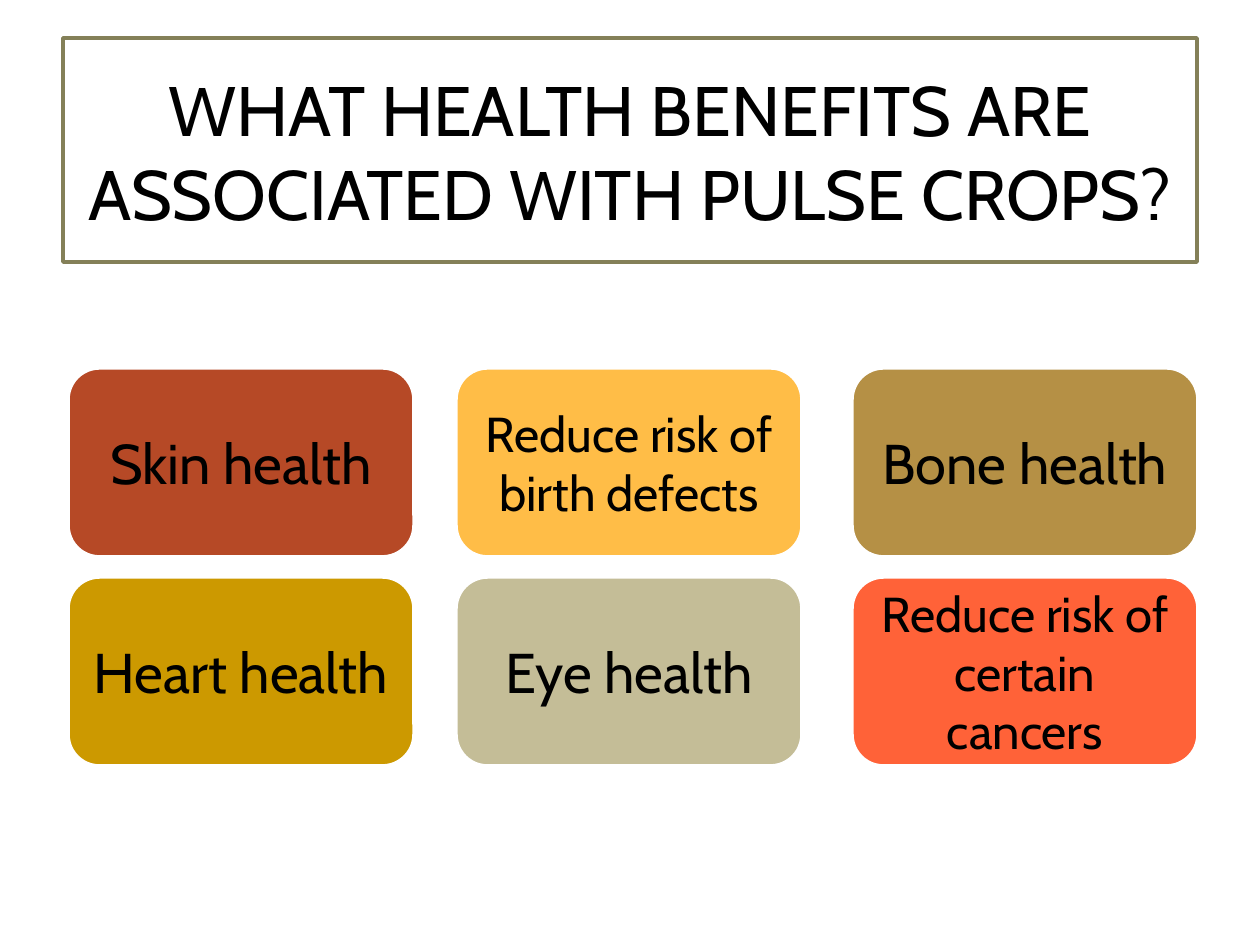
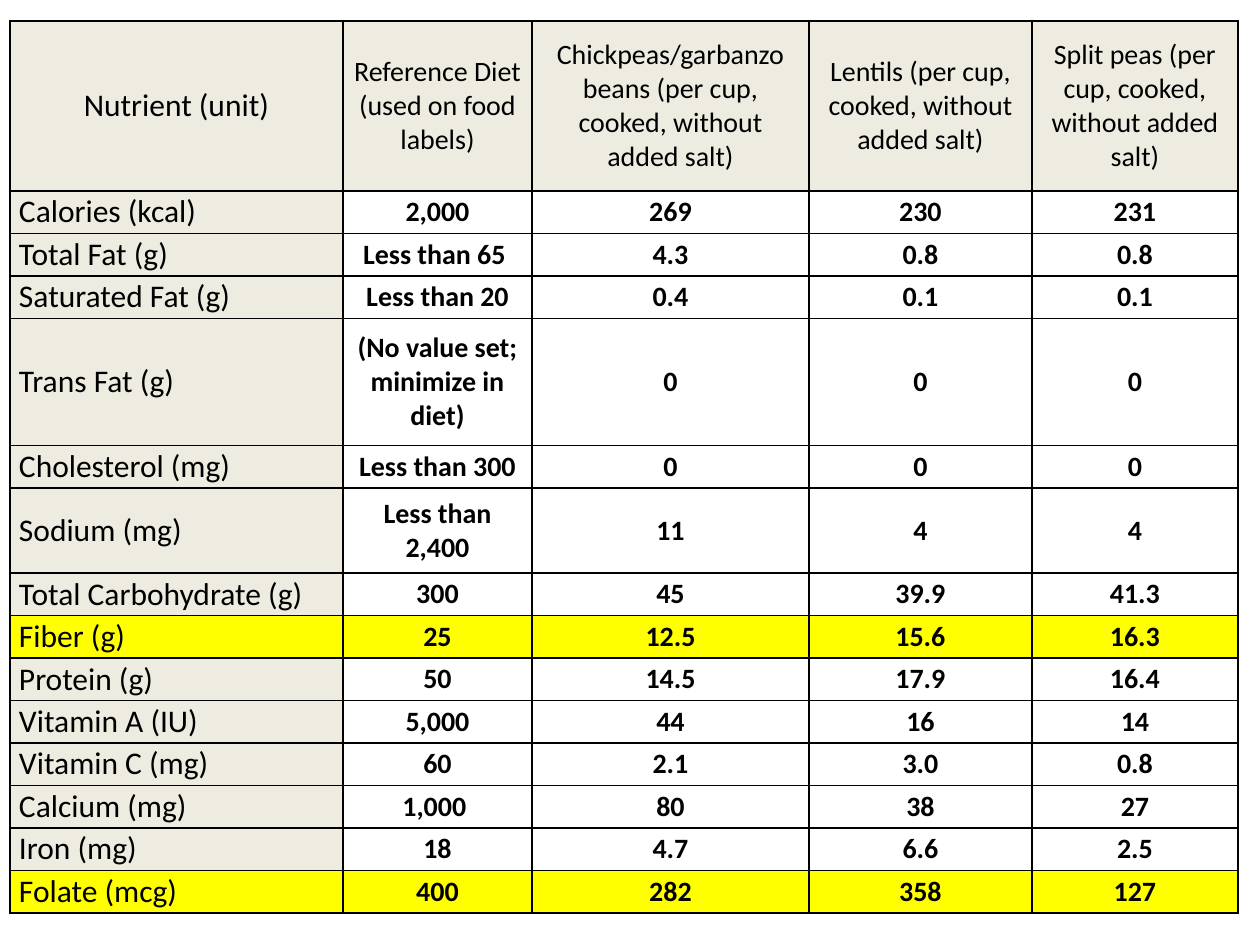
import pptx
import pptx.util
import pptx.dml.color
import pptx.enum.shapes
import pptx.enum.text
import pptx.oxml.ns
from lxml import etree

SCALE = 914400 / 126  # EMU in one px
COLORS = {
    "text": "000000", "paper": "FFFFFF", "frame": "848058",
    "rust": "B64926", "amber": "FFBD47", "bronze": "B59045",
    "gold": "CC9900", "khaki": "C4BD97", "coral": "FF6238",
    "label": "EEECE1", "highlight": "FFFF00",
}
CENTER = pptx.enum.text.PP_ALIGN.CENTER
LEFT = pptx.enum.text.PP_ALIGN.LEFT
MIDDLE = pptx.enum.text.MSO_ANCHOR.MIDDLE


def px(length):
    return pptx.util.Emu(round(length * SCALE))


def write(frame, text, font, size, bold=False, align=CENTER):
    frame.word_wrap = True
    frame.text = text
    para = frame.paragraphs[0]
    para.alignment = align
    span = para.runs[0]
    span.font.name = font
    span.font.size = pptx.util.Pt(size)
    span.font.bold = bold
    span.font.color.rgb = pptx.dml.color.RGBColor.from_string(COLORS["text"])


deck = pptx.Presentation()
deck.slide_width, deck.slide_height = px(1260), px(945)

# Slide 1: framed title
page = deck.slides.add_slide(deck.slide_layouts[5])
title = page.shapes.title
title.left, title.top, title.width, title.height = px(63), px(38), px(1134), px(224)
write(title.text_frame, "WHAT HEALTH BENEFITS ARE ASSOCIATED WITH PULSE CROPS?", "Cabin", 40)
outlined = [(title, "paper", "frame")]

# Slide 1: grid of benefit cards
card_lefts = [68, 456, 852]
card_tops = [368, 577]
benefits = [
    [("Skin health", 32, "rust"), ("Reduce risk of birth defects", 28, "amber"),
     ("Bone health", 32, "bronze")],
    [("Heart health", 32, "gold"), ("Eye health", 32, "khaki"),
     ("Reduce risk of certain cancers", 28, "coral")],
]
for top, benefit_row in zip(card_tops, benefits):
    for left, (benefit, size, color) in zip(card_lefts, benefit_row):
        card = page.shapes.add_shape(
            pptx.enum.shapes.MSO_SHAPE.ROUNDED_RECTANGLE, px(left), px(top), px(346), px(189))
        card.shadow.inherit = False
        write(card.text_frame, benefit, "Cabin", size)
        outlined.append((card, color, "paper"))

# Slide 1: fills and outlines
for box, fill, line in outlined:
    box.fill.solid()
    box.fill.fore_color.rgb = pptx.dml.color.RGBColor.from_string(COLORS[fill])
    box.line.color.rgb = pptx.dml.color.RGBColor.from_string(COLORS[line])
    box.line.width = pptx.util.Pt(2)
    box.text_frame.vertical_anchor = MIDDLE
    box.text_frame.auto_size = pptx.enum.text.MSO_AUTO_SIZE.NONE

# Slide 2: nutrient table, each row led by its height in text lines
nutrients = [
    (4, "Nutrient (unit)", "Reference Diet (used on food labels)",
     "Chickpeas/garbanzo beans (per cup, cooked, without added salt)",
     "Lentils (per cup, cooked, without added salt)",
     "Split peas (per cup, cooked, without added salt)"),
    (1, "Calories (kcal)", "2,000", "269", "230", "231"),
    (1, "Total Fat (g)", "Less than 65 ", "4.3", "0.8", "0.8"),
    (1, "Saturated Fat (g)", "Less than 20", "0.4", "0.1", "0.1"),
    (3, "Trans Fat (g)", "(No value set; minimize in diet)", "0", "0", "0"),
    (1, "Cholesterol (mg)", "Less than 300", "0", "0", "0"),
    (2, "Sodium (mg)", "Less than 2,400", "11", "4", "4"),
    (1, "Total Carbohydrate (g)", "300", "45", "39.9", "41.3"),
    (1, "Fiber (g)", "25", "12.5", "15.6", "16.3"),
    (1, "Protein (g)", "50", "14.5", "17.9", "16.4"),
    (1, "Vitamin A (IU)", "5,000", "44", "16", "14"),
    (1, "Vitamin C (mg)", "60", "2.1", "3.0", "0.8"),
    (1, "Calcium (mg)", "1,000 ", "80", "38", "27"),
    (1, "Iron (mg)", "18", "4.7", "6.6", "2.5"),
    (1, "Folate (mcg)", "400", "282", "358", "127"),
]
highlighted = {"Fiber (g)", "Folate (mcg)"}
column_widths = [333, 189, 277, 223, 206]
table_height = 892
total_lines = sum(row[0] for row in nutrients)

page = deck.slides.add_slide(deck.slide_layouts[6])
table = page.shapes.add_table(
    len(nutrients), len(column_widths), px(10), px(21),
    px(sum(column_widths)), px(table_height)).table
table.first_row = table.horz_banding = False
for column, width in zip(table.columns, column_widths):
    column.width = px(width)

for row_index, (lines, *texts) in enumerate(nutrients):
    table.rows[row_index].height = px(table_height * lines / total_lines)
    for column_index, text in enumerate(texts):
        cell = table.cell(row_index, column_index)
        is_header, is_label = row_index == 0, column_index == 0
        write(cell.text_frame, text, "Calibri", 18 if is_label else 16,
              bold=not (is_header or is_label),
              align=LEFT if is_label and not is_header else CENTER)
        cell.vertical_anchor = MIDDLE
        cell.margin_left = cell.margin_right = px(9)
        cell.margin_top = cell.margin_bottom = 0

        # Black one-point borders, placed ahead of the fill
        properties = cell._tc.get_or_add_tcPr()
        for side in ("a:lnL", "a:lnR", "a:lnT", "a:lnB"):
            border = etree.SubElement(
                properties, pptx.oxml.ns.qn(side), w=str(pptx.util.Pt(1)))
            paint = etree.SubElement(border, pptx.oxml.ns.qn("a:solidFill"))
            etree.SubElement(paint, pptx.oxml.ns.qn("a:srgbClr"), val=COLORS["text"])

        if texts[0] in highlighted:
            fill = "highlight"
        else:
            fill = "label" if is_header or is_label else "paper"
        cell.fill.solid()
        cell.fill.fore_color.rgb = pptx.dml.color.RGBColor.from_string(COLORS[fill])

deck.save("out.pptx")
